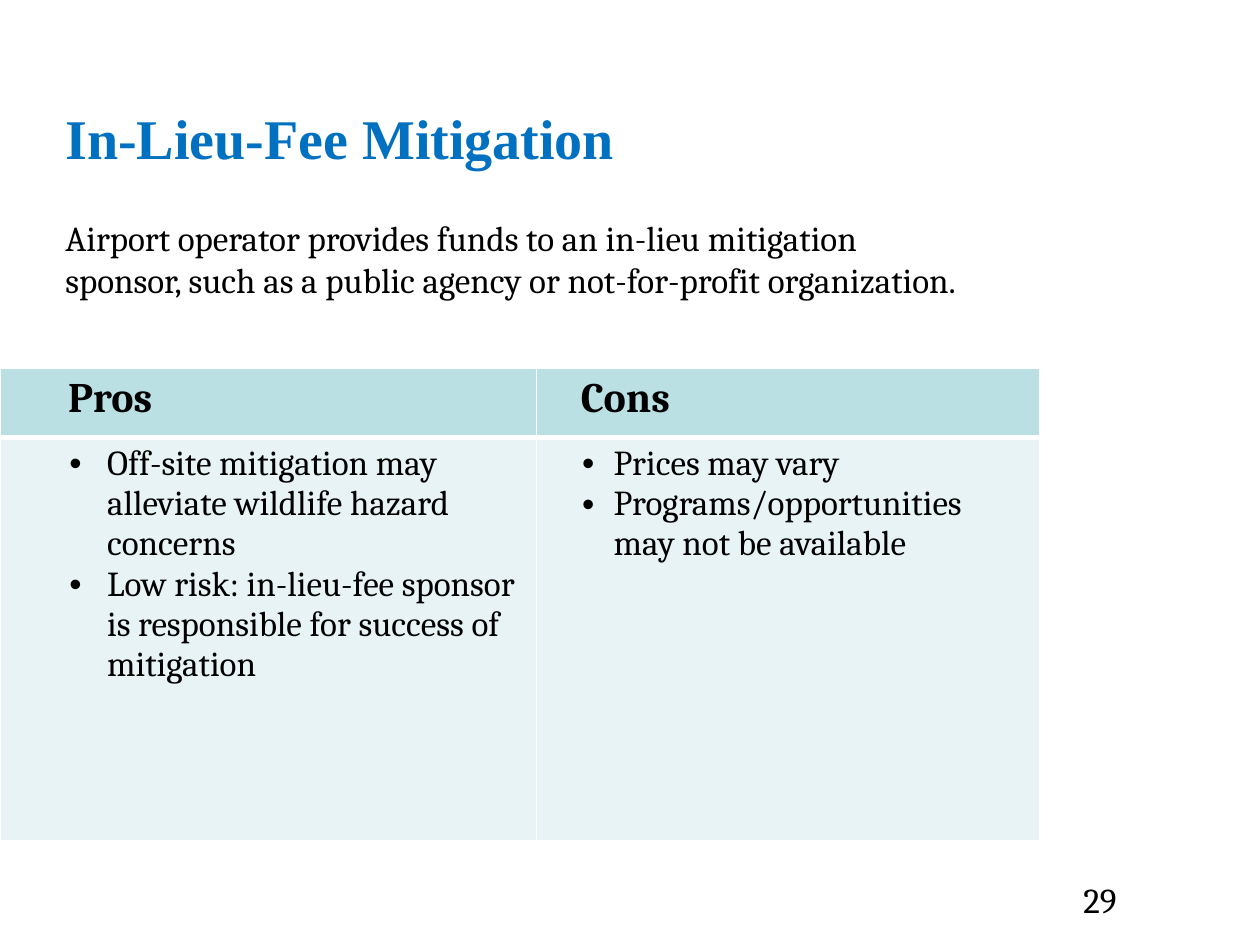
from dataclasses import dataclass

from lxml import etree
from pptx import Presentation
from pptx import util as u
from pptx.dml.color import RGBColor
from pptx.enum import text
from pptx.oxml import ns

BLUE = RGBColor(0x00, 0x70, 0xC0)
BLACK = RGBColor(0x00, 0x00, 0x00)
HEADER_TEAL = RGBColor(0xBB, 0xE0, 0xE3)
BODY_TEAL = RGBColor(0xE7, 0xF3, 0xF4)
RULE_WHITE = RGBColor(0xFF, 0xFF, 0xFF)
BODY_FONT = "Cambria"
HEADER_RULE = 3


@dataclass
class TextStyle:
    size: int
    font: str = BODY_FONT
    color: RGBColor = BLACK
    bold: bool = False


@dataclass
class Column:
    heading: str
    points: list[str]
    width: float
    heading_indent: tuple[float, float]
    point_indent: tuple[float, float]


TITLE = TextStyle(32, "Times New Roman", BLUE, True)
HEADING = TextStyle(24, bold=True)
BODY = TextStyle(20)

COLUMNS = [
    Column("Pros",
           ["Off-site mitigation may alleviate wildlife hazard concerns",
            "Low risk: in-lieu-fee sponsor is responsible for success of mitigation"],
           4.26, (0.38, 0.06), (0.75, -0.3)),
    Column("Cons",
           ["Prices may vary", "Programs/opportunities may not be available"],
           3.99, (0, 0.25), (0.51, -0.25)),
]


def style_paragraph(paragraph, style: TextStyle) -> None:
    for run in paragraph.runs:
        run.font.size = u.Pt(style.size)
        run.font.name = style.font
        run.font.bold = style.bold
        run.font.color.rgb = style.color


def add_text(slide, content: str, box: tuple[float, ...], style: TextStyle,
             anchor=text.MSO_ANCHOR.TOP) -> None:
    frame = slide.shapes.add_textbox(*map(u.Inches, box)).text_frame
    frame.word_wrap = True
    frame.vertical_anchor = anchor
    frame.text = content
    style_paragraph(frame.paragraphs[0], style)


def add_border(cell, side: str, width: float) -> None:
    line = etree.SubElement(cell._tc.get_or_add_tcPr(), ns.qn(f"a:ln{side}"),
                            w=str(u.Pt(width)))
    fill = etree.SubElement(line, ns.qn("a:solidFill"))
    etree.SubElement(fill, ns.qn("a:srgbClr"), val=str(RULE_WHITE))


def fill_cell(cell, lines: list[str], style: TextStyle, fill: RGBColor,
              indent: tuple[float, float], top: float = 1, bottom: float = 1,
              bulleted: bool = False) -> None:
    for side, width in zip("LRTB", (1, 1, top, bottom)):
        add_border(cell, side, width)
    cell.fill.solid()
    cell.fill.fore_color.rgb = fill
    cell.text_frame.text = "\n".join(lines)
    for paragraph in cell.text_frame.paragraphs:
        properties = paragraph._p.get_or_add_pPr()
        for key, length in zip(("marL", "indent"), indent):
            properties.set(key, str(u.Inches(length)))
        if bulleted:
            etree.SubElement(properties, ns.qn("a:buFont"), typeface="Arial")
            etree.SubElement(properties, ns.qn("a:buChar"), char="•")
        style_paragraph(paragraph, style)


def add_comparison(slide, columns: list[Column]) -> None:
    table = slide.shapes.add_table(
        2, len(columns), u.Inches(0), u.Inches(2.92),
        u.Inches(sum(column.width for column in columns)), u.Inches(3.75)).table
    for row, height in zip(table.rows, (0.55, 3.2)):
        row.height = u.Inches(height)
    for index, column in enumerate(columns):
        table.columns[index].width = u.Inches(column.width)
        fill_cell(table.cell(0, index), [column.heading], HEADING, HEADER_TEAL,
                  column.heading_indent, bottom=HEADER_RULE)
        fill_cell(table.cell(1, index), column.points, BODY, BODY_TEAL,
                  column.point_indent, top=HEADER_RULE, bulleted=True)


def main() -> None:
    deck = Presentation()
    deck.slide_width, deck.slide_height = u.Inches(10), u.Inches(7.5)
    slide = deck.slides.add_slide(deck.slide_layouts[6])

    # Title and definition
    add_text(slide, "In-Lieu-Fee Mitigation", (0.42, 0.67, 7.67, 0.83), TITLE,
             text.MSO_ANCHOR.MIDDLE)
    add_text(slide,
             "Airport operator provides funds to an in-lieu mitigation sponsor, "
             "such as a public agency or not-for-profit organization.",
             (0.42, 1.67, 7.42, 0.77), BODY)

    # Pros and cons
    add_comparison(slide, COLUMNS)

    # Page number
    add_text(slide, "29", (8.5, 6.92, 0.75, 0.44), BODY)

    deck.save("out.pptx")


if __name__ == "__main__":
    main()
